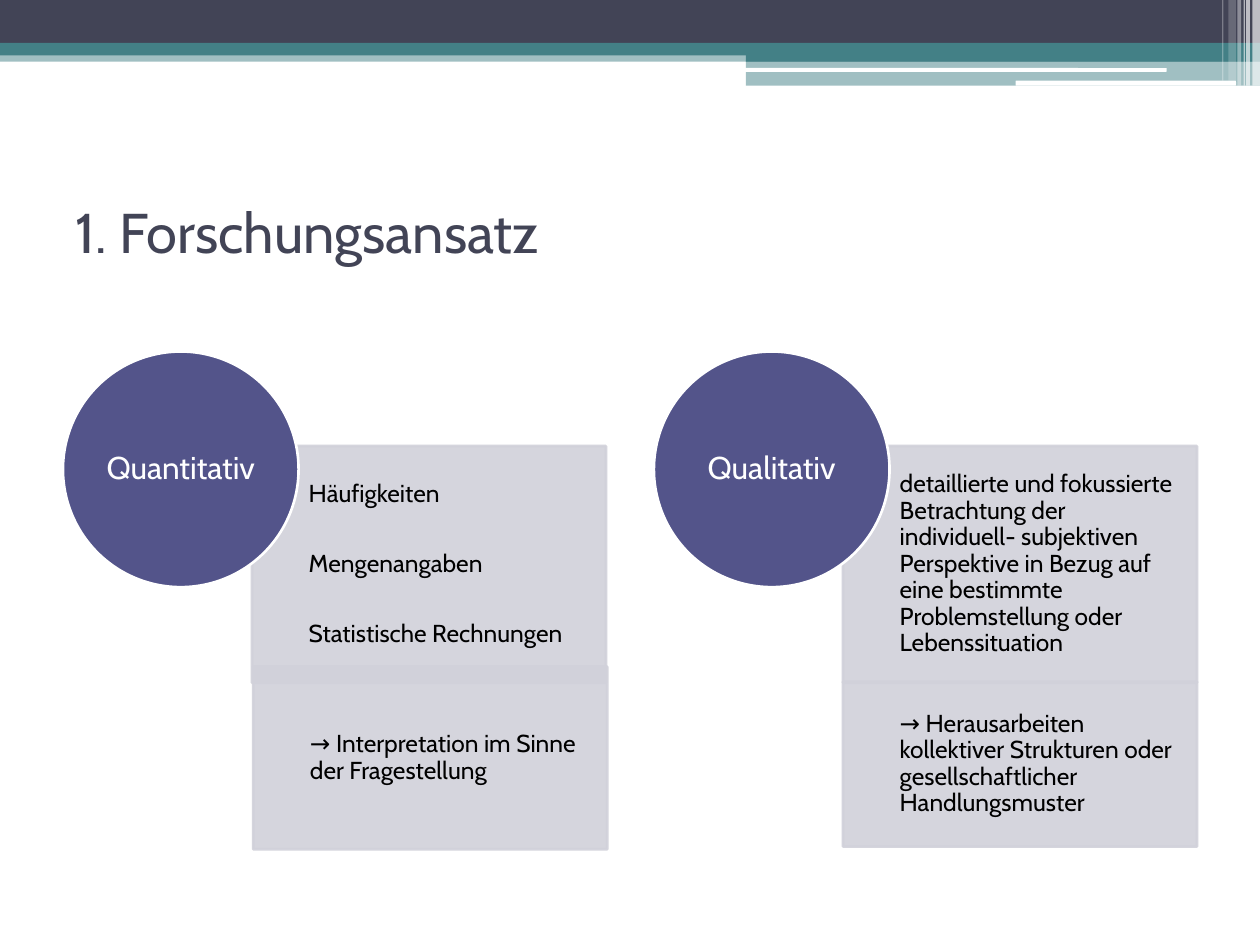
from lxml import etree
from pptx import Presentation
from pptx import util as u
from pptx.dml.color import RGBColor
from pptx.enum import shapes, text
from pptx.oxml.ns import qn

THEME = {
    "font": "Cabin",
    "dark": "424456", "teal": "438086", "white": "FFFFFF",
    "circle": "53548A", "panel": "D1D1DA", "body": "000000",
    "title_pt": 32, "label_pt": 18, "body_pt": 14, "line_pt": 1.5,
}
RECT = shapes.MSO_SHAPE.RECTANGLE
ROUND = shapes.MSO_SHAPE.ROUNDED_RECTANGLE
OVAL = shapes.MSO_SHAPE.OVAL

prs = Presentation()
prs.slide_width, prs.slide_height = u.Inches(10), u.Inches(7.5)
s = prs.slides.add_slide(prs.slide_layouts[5])


def add_shape(kind, box, color, alpha=100, line=None):
    """Add a flat shape; alpha (percent) applies to fill and line."""
    sp = s.shapes.add_shape(kind, *[u.Inches(v) for v in box])
    sp.shadow.inherit = False
    sp.fill.solid()
    sp.fill.fore_color.rgb = RGBColor.from_string(THEME[color])
    if line:
        sp.line.color.rgb = RGBColor.from_string(THEME[line])
        sp.line.width = u.Pt(THEME["line_pt"])
    else:
        sp.line.fill.background()
    if alpha < 100:
        for clr in sp._element.spPr.iter(qn("a:srgbClr")):
            etree.SubElement(clr, qn("a:alpha"), val=str(alpha * 1000))
    return sp


def set_text(sp, lines, size, color, align, margins, gap=0):
    """Fill a shape with paragraphs, gap points apart."""
    tf = sp.text_frame
    tf.word_wrap = True
    tf.vertical_anchor = text.MSO_ANCHOR.MIDDLE
    (tf.margin_left, tf.margin_top,
     tf.margin_right, tf.margin_bottom) = [u.Inches(m) for m in margins]
    tf.text = "\n".join(lines)
    for i, p in enumerate(tf.paragraphs):
        p.alignment = align
        p.line_spacing = 0.9
        p.space_before = u.Pt(gap if i else 0)
        for r in p.runs:
            r.font.name = THEME["font"]
            r.font.size = u.Pt(THEME[size])
            r.font.color.rgb = RGBColor.from_string(THEME[color])


# Header bands
for kind, box, color, alpha in [
    (RECT, (0, 0.4, 10, 0.09), "teal", 50),
    (RECT, (0, 0, 10, 0.34), "dark", 100),
    (RECT, (0, 0.34, 10, 0.1), "teal", 100),
    (RECT, (5.92, 0.39, 4.08, 0.1), "teal", 100),
    (RECT, (5.92, 0.48, 4.08, 0.2), "teal", 50),
    (ROUND, (5.91, 0.54, 3.35, 0.03), "white", 100),
    (ROUND, (8.06, 0.64, 1.75, 0.04), "white", 100),
]:
    add_shape(kind, box, color, alpha)

# Vertical stripes at the right end of the header
for left, width, height, alpha in [
    (9.94, 0.06, 0.68, 65), (9.89, 0.03, 0.68, 65), (9.87, 0.01, 0.68, 60),
    (9.82, 0.03, 0.68, 40), (9.75, 0.06, 0.64, 20), (9.7, 0.01, 0.64, 30),
]:
    add_shape(RECT, (left, 0, width, height), "white", alpha)

# Title
title = s.shapes.title
title.left, title.top = u.Inches(0.5), u.Inches(1.25)
title.width, title.height = u.Inches(9), u.Inches(1.17)
set_text(title, ["1. Forschungsansatz"], "title_pt", "dark",
         text.PP_ALIGN.LEFT, (0.1, 0.05, 0.1, 0.05))
title.text_frame.paragraphs[0].line_spacing = 1.0

# Two columns: stacked panels with a circle over the upper left corner
LEFT, PITCH, INDENT = 0.5, 4.69, 1.5
PANEL_W, DIAMETER = 2.81, 1.87
columns = [
    ("Quantitativ", [
        (3.54, 1.88, 0, ["Häufigkeiten", "Mengenangaben",
                         "Statistische Rechnungen"]),
        (5.29, 1.45, 0.01, ["→ Interpretation im Sinne der Fragestellung"]),
    ]),
    ("Qualitativ", [
        (3.54, 1.88, 0, ["detaillierte und fokussierte Betrachtung der "
                         "individuell- subjektiven Perspektive in Bezug auf "
                         "eine bestimmte Problemstellung oder "
                         "Lebenssituation"]),
        (5.41, 1.31, 0, ["→ Herausarbeiten kollektiver Strukturen oder "
                         "gesellschaftlicher Handlungsmuster"]),
    ]),
]
for col, (label, panels) in enumerate(columns):
    x = LEFT + col * PITCH
    for top, height, shift, lines in panels:
        sp = add_shape(RECT, (x + INDENT + shift, top, PANEL_W, height),
                       "panel", 90, "panel")
        set_text(sp, lines, "body_pt", "body", text.PP_ALIGN.LEFT,
                 (0.45, 0.11, 0.11, 0.11), gap=25)
    circle = add_shape(OVAL, (x, 2.79, DIAMETER, DIAMETER), "circle",
                       line="white")
    set_text(circle, [label], "label_pt", "white", text.PP_ALIGN.CENTER,
             (0, 0, 0, 0))

prs.save("out.pptx")
